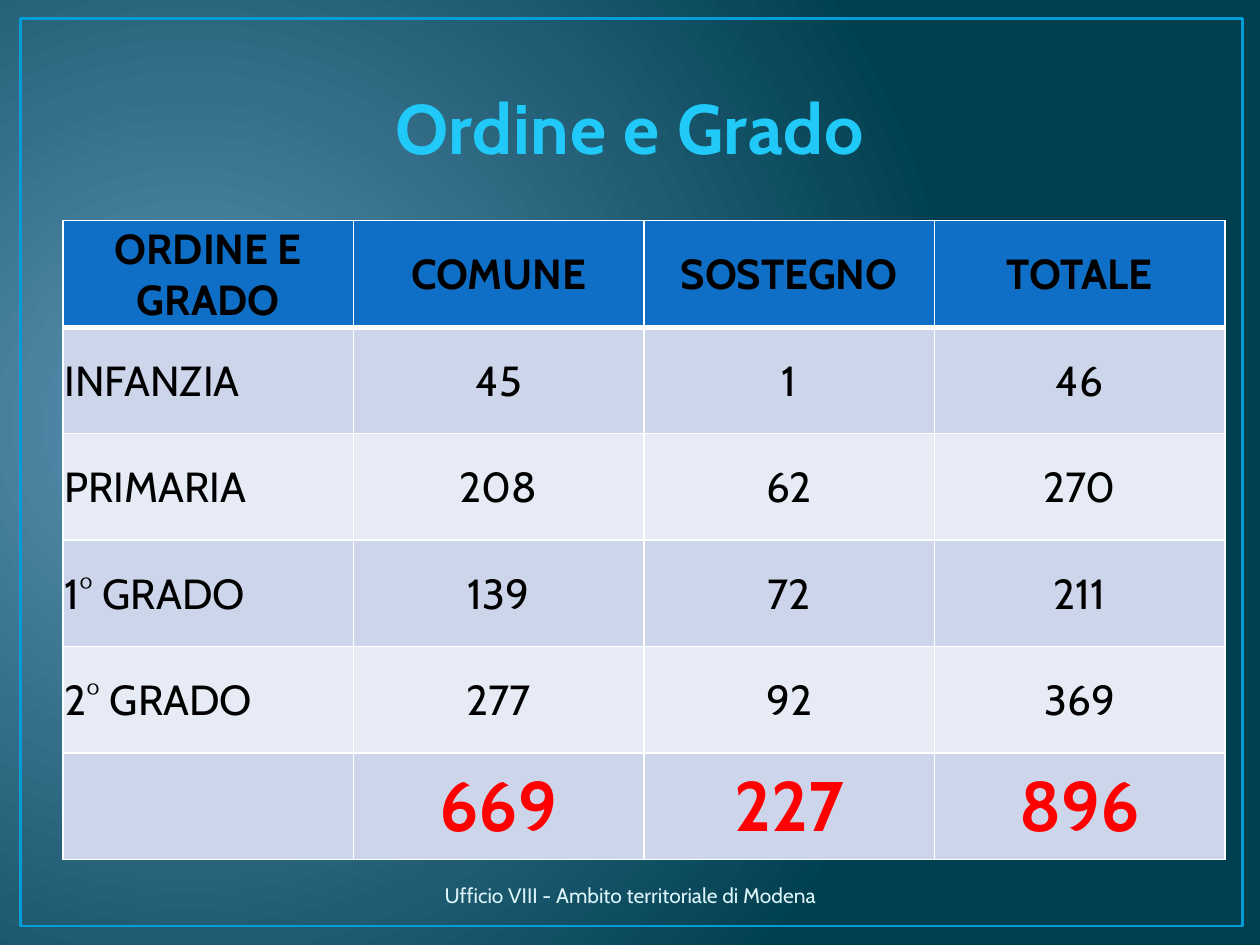
from lxml.etree import SubElement
from pptx import Presentation
from pptx.dml.color import RGBColor
from pptx.enum.shapes import MSO_SHAPE
from pptx.enum.text import MSO_ANCHOR, PP_ALIGN
from pptx.oxml.ns import qn
from pptx.util import Cm, Pt


def colour(hex_code):
    return RGBColor.from_string(hex_code)


class SlideBuilder:
    font = "Cabin"
    header_fill = "0F6FC6"
    band_fills = ("CCD5EA", "E7EBF5")

    def __init__(self, deck):
        self.slide = deck.slides.add_slide(deck.slide_layouts[6])

    def background(self, centre, edge):
        fill = self.slide.background.fill
        fill.gradient()
        for stop, hex_code in zip(fill.gradient_stops, (centre, edge)):
            stop.color.rgb = colour(hex_code)
        # Turn the linear gradient into a circular one
        gradient = self.slide.element.find(".//" + qn("a:gradFill"))
        gradient.remove(gradient.find(qn("a:lin")))
        circle = SubElement(gradient, qn("a:path"), path="circle")
        SubElement(circle, qn("a:fillToRect"),
                   l="15000", t="50000", r="85000", b="60000")

    def frame(self, left, top, width, height, line):
        box = self.slide.shapes.add_shape(
            MSO_SHAPE.RECTANGLE, Cm(left), Cm(top), Cm(width), Cm(height))
        box.shadow.inherit = False
        box.fill.background()
        box.line.color.rgb = colour(line)
        box.line.width = Pt(1.5)

    def set_text(self, text_frame, text, size, hex_code, bold=False,
                 align=PP_ALIGN.CENTER):
        text_frame.text = text
        para = text_frame.paragraphs[0]
        para.alignment = align
        for span in para.runs:
            span.font.name = self.font
            span.font.size = Pt(size)
            span.font.bold = bold
            span.font.color.rgb = colour(hex_code)
        return para

    def text(self, left, top, width, height, text, size, hex_code,
             bold=False, anchor=MSO_ANCHOR.MIDDLE):
        box = self.slide.shapes.add_textbox(
            Cm(left), Cm(top), Cm(width), Cm(height))
        box.text_frame.word_wrap = True
        box.text_frame.vertical_anchor = anchor
        return self.set_text(box.text_frame, text, size, hex_code, bold)

    def borders(self, cell, bottom):
        properties = cell._tc.get_or_add_tcPr()
        widths = {"a:lnL": 1, "a:lnR": 1, "a:lnT": 1, "a:lnB": bottom}
        for index, (side, width) in enumerate(widths.items()):
            line = SubElement(properties, qn(side), w=str(Pt(width)))
            fill = SubElement(line, qn("a:solidFill"))
            SubElement(fill, qn("a:srgbClr"), val="FFFFFF")
            properties.insert(index, line)

    def table(self, left, top, width, height, rows):
        table = self.slide.shapes.add_table(
            len(rows), len(rows[0]),
            Cm(left), Cm(top), Cm(width), Cm(height)).table
        last = len(rows) - 1
        for i, row in enumerate(rows):
            for j, value in enumerate(row):
                cell = table.cell(i, j)
                cell.vertical_anchor = MSO_ANCHOR.MIDDLE
                cell.margin_left = cell.margin_right = cell.margin_top = Cm(0.03)
                cell.margin_bottom = 0
                cell.fill.solid()
                cell.fill.fore_color.rgb = colour(
                    self.band_fills[(i - 1) % 2] if i else self.header_fill)
                # The header has a thick lower edge, shared with the first row
                self.borders(cell, 1 if i else 3)
                is_label = j == 0 and i > 0
                self.set_text(cell.text_frame, value,
                              40 if i == last else 24,
                              "FF0000" if i == last else "000000",
                              i in (0, last),
                              PP_ALIGN.LEFT if is_label else PP_ALIGN.CENTER)
        for cell in table.rows[1].cells:
            properties = cell._tc.get_or_add_tcPr()
            properties.find(qn("a:lnT")).set("w", str(Pt(3)))


def main():
    deck = Presentation()
    deck.slide_width, deck.slide_height = Cm(25.4), Cm(19.05)
    page = SlideBuilder(deck)

    # Background and border
    page.background("5C92B3", "003F50")
    page.frame(0.41, 0.38, 24.64, 18.29, "009DD9")

    # Title
    title = page.text(1.27, 0.33, 22.86, 3.2, "Ordine e Grado", 40, "20C9F8",
                      bold=True, anchor=MSO_ANCHOR.BOTTOM)
    title.runs[0].font._element.set("spc", "50")

    # Posts by school level
    page.table(1.27, 4.45, 23.42, 12.88, [
        ("ORDINE E GRADO", "COMUNE", "SOSTEGNO", "TOTALE"),
        ("INFANZIA", "45", "1", "46"),
        ("PRIMARIA", "208", "62", "270"),
        ("1° GRADO", "139", "72", "211"),
        ("2° GRADO", "277", "92", "369"),
        ("", "669", "227", "896"),
    ])

    # Footer
    page.text(7.87, 17.53, 9.68, 1.02,
              "Ufficio VIII - Ambito territoriale di Modena", 12, "DBF5F9")

    deck.save("out.pptx")


if __name__ == "__main__":
    main()
